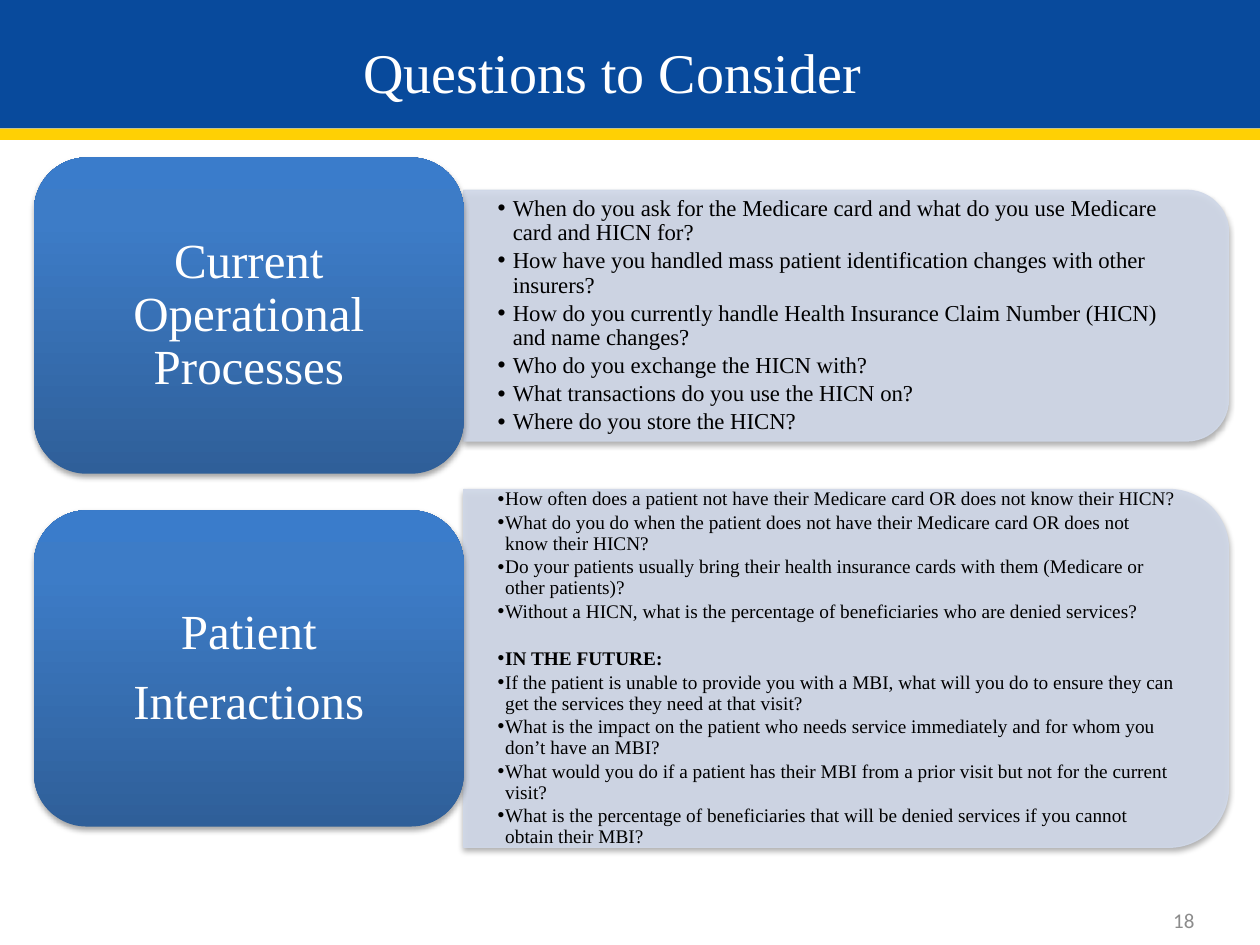
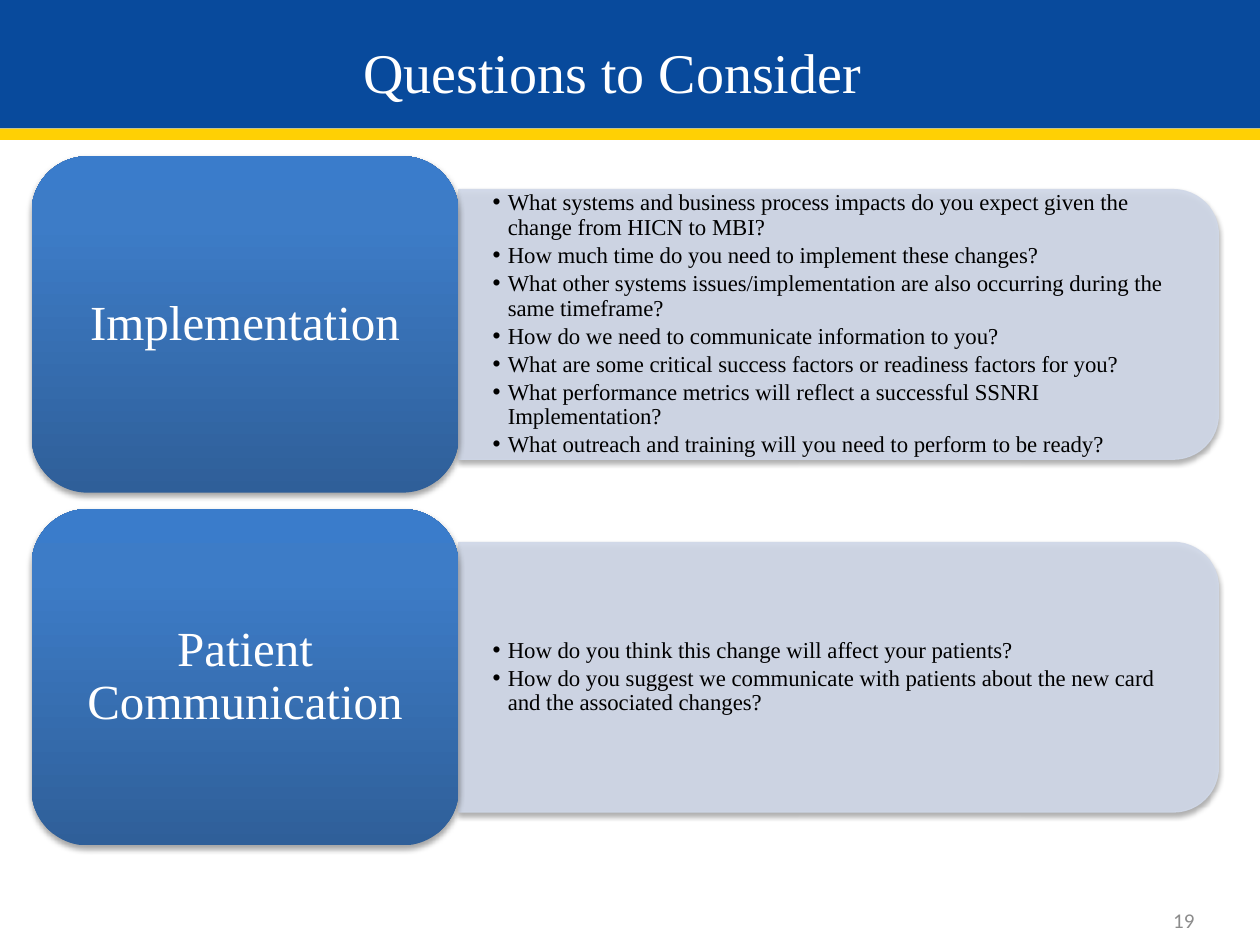
from copy import deepcopy

from lxml import etree
from pptx import Presentation
from pptx.dml.color import RGBColor
from pptx.enum.shapes import MSO_SHAPE, PP_PLACEHOLDER
from pptx.enum.text import MSO_ANCHOR, MSO_AUTO_SIZE, PP_ALIGN
from pptx.oxml.ns import qn
from pptx.util import Inches, Pt

RECT, ROUND = MSO_SHAPE.RECTANGLE, MSO_SHAPE.ROUNDED_RECTANGLE
ROUND_TOP = MSO_SHAPE.ROUND_2_SAME_RECTANGLE
SLIDE_NUMBER = PP_PLACEHOLDER.SLIDE_NUMBER
MIDDLE, NO_FIT = MSO_ANCHOR.MIDDLE, MSO_AUTO_SIZE.NONE
CENTER, LEFT, RIGHT = PP_ALIGN.CENTER, PP_ALIGN.LEFT, PP_ALIGN.RIGHT

COLORS = {
    "band": "084A9C", "stripe": "FFD004", "panel": "D0D8E8",
    "block_low": "2F5F99", "block_mid": "3D7CC7", "block_high": "3A7CCB",
    "white": "FFFFFF", "black": "000000", "number": "8C8C8C",
}
SERIF, SANS = "Times New Roman", "Calibri"
CORNER_INSET = 0.05
ROW_PITCH = 2.8
FIRST_NUMBER = 18

SLIDES = [
    {
        "block": (0.27, 1.25, 3.41, 2.51), "panel_width": 6.07,
        "rows": [
            {
                "label": ["Current Operational Processes"],
                "panel_height": 1.99, "size": 13, "indent": 0.12,
                "questions": [
                    "When do you ask for the Medicare card and what do you use Medicare card and HICN for?",
                    "How have you handled mass patient identification changes with other insurers?",
                    "How do you currently handle Health Insurance Claim Number (HICN) and name changes?",
                    "Who do you exchange the HICN with?",
                    "What transactions do you use the HICN on?",
                    "Where do you store the HICN?",
                ],
            },
            {
                "label": ["Patient", "Interactions"],
                "panel_height": 2.84, "size": 11, "indent": 0.06,
                "questions": [
                    "How often does a patient not have their Medicare card OR does not know their HICN?",
                    "What do you do when the patient does not have their Medicare card OR does not know their HICN?",
                    "Do your patients usually bring their health insurance cards with them (Medicare or other patients)?",
                    "Without a HICN, what is the percentage of beneficiaries who are denied services?",
                    "IN THE FUTURE:",
                    "If the patient is unable to provide you with a MBI, what will you do to ensure they can get the services they need at that visit?",
                    "What is the impact on the patient who needs service immediately and for whom you don’t have an MBI?",
                    "What would you do if a patient has their MBI from a prior visit but not for the current visit?",
                    "What is the percentage of beneficiaries that will be denied services if you cannot obtain their MBI?",
                ],
            },
        ],
    },
    {
        "block": (0.25, 1.24, 3.39, 2.67), "panel_width": 6.03,
        "rows": [
            {
                "label": ["Implementation"],
                "panel_height": 2.14, "size": 13, "indent": 0.12,
                "questions": [
                    "What systems and business process impacts do you expect given the change from HICN to MBI?",
                    "How much time do you need to implement these changes?",
                    "What other systems issues/implementation are also occurring during the same timeframe?",
                    "How do we need to communicate information to you?",
                    "What are some critical success factors or readiness factors for you?",
                    "What performance metrics will reflect a successful SSNRI Implementation?",
                    "What outreach and training will you need to perform to be ready?",
                ],
            },
            {
                "label": ["Patient Communication"],
                "panel_height": 2.14, "size": 13, "indent": 0.12,
                "questions": [
                    "How do you think this change will affect your patients?",
                    "How do you suggest we communicate with patients about the new card and the associated changes?",
                ],
            },
        ],
    },
]


def rgb(name):
    """Return the named colour."""
    return RGBColor.from_string(COLORS[name])


def place(sp, left, top, width, height):
    """Move and size a shape, in inches."""
    sp.left, sp.top = Inches(left), Inches(top)
    sp.width, sp.height = Inches(width), Inches(height)


def add_plain_shape(slide, kind, box):
    """Add a preset shape without line or shadow."""
    sp = slide.shapes.add_shape(kind, *map(Inches, box))
    sp.shadow.inherit = False
    sp.line.fill.background()
    return sp


def add_shadow(sp):
    """Give a shape a soft shadow below it."""
    effects = sp.element.spPr.find(qn("a:effectLst"))
    shadow = etree.SubElement(effects, qn("a:outerShdw"), blurRad="40000",
                              dist="23000", dir="5400000", rotWithShape="0")
    color = etree.SubElement(shadow, qn("a:srgbClr"), val=COLORS["black"])
    etree.SubElement(color, qn("a:alpha"), val="35000")


def set_frame(tf, inset_x, inset_y):
    """Wrap, centre vertically and inset a text frame."""
    tf.word_wrap, tf.auto_size, tf.vertical_anchor = True, NO_FIT, MIDDLE
    tf.margin_left = tf.margin_right = Inches(inset_x)
    tf.margin_top = tf.margin_bottom = Inches(inset_y)


def add_run(p, text, size, color, font=SERIF, bold=False):
    """Add one formatted run."""
    r = p.add_run()
    r.text = text
    r.font.name, r.font.size, r.font.bold = font, Pt(size), bold
    r.font.color.rgb = rgb(color)
    return r


def write_paragraphs(tf, lines, size, color, align, after):
    """Write lines with tight leading and a gap after each, then yield them."""
    for i, line in enumerate(lines):
        p = tf.paragraphs[0] if i == 0 else tf.add_paragraph()
        p.alignment, p.line_spacing = align, 0.9
        p.space_before, p.space_after = Pt(0), Pt(size * after)
        add_run(p, line, size, color, bold=line.isupper())
        yield p


def set_up_layout(slide):
    """Put the header bands and the title position on the shared layout."""
    layout = slide.slide_layout
    bands = [("band", (0, 0, 10, 1.02)), ("stripe", (0, 1.02, 10, 0.09))]
    for i, (color, box) in enumerate(bands):
        sp = add_plain_shape(slide, RECT, box)
        sp.fill.solid()
        sp.fill.fore_color.rgb = rgb(color)
        sp.element.find(".//" + qn("p:cNvPr")).set("id", str(20 + i))
        layout.shapes.element.insert(2 + i, sp.element)
    place(layout.placeholders[0], 0.92, 0.14, 7.88, 0.92)


def add_title(slide):
    """Fill the title placeholder."""
    tf = slide.shapes.title.text_frame
    set_frame(tf, 0.1, 0.05)
    list(write_paragraphs(tf, ["Questions to Consider"], 32, "white", CENTER, 0))


def add_number(slide, number):
    """Add the slide number placeholder with its field."""
    source = next(ph for ph in slide.slide_layout.placeholders
                  if ph.placeholder_format.type == SLIDE_NUMBER)
    slide.shapes.element.append(deepcopy(source.element))
    sp = slide.shapes[-1]
    place(sp, 7.25, 7.1, 2.33, 0.4)
    tf = sp.text_frame
    tf.clear()
    set_frame(tf, 0.1, 0.05)
    p = tf.paragraphs[0]
    p.alignment = RIGHT
    r = add_run(p, str(number), 12, "number", SANS)._r
    field = etree.SubElement(p._p, qn("a:fld"), type="slidenum",
                             id="{B6F15528-21DE-4FAA-801E-634DDDAF4B2B}")
    field.extend(list(r))
    p._p.remove(r)


def add_block(slide, box, label):
    """Draw the gradient block with its label."""
    sp = add_plain_shape(slide, ROUND, box)
    sp.fill.gradient()
    sp.fill.gradient_angle = 90
    stops = sp.element.spPr.find(".//" + qn("a:gsLst"))
    stops.append(deepcopy(stops[0]))
    ramp = [(0, "block_low"), (0.8, "block_mid"), (1, "block_high")]
    for stop, (position, color) in zip(sp.fill.gradient_stops, ramp):
        stop.position, stop.color.rgb = position, rgb(color)
    add_shadow(sp)
    set_frame(sp.text_frame, 0.12, 0.06)
    list(write_paragraphs(sp.text_frame, label, 28, "white", CENTER, 0.35))


def add_panel(slide, box, body):
    """Draw the panel, rounded on its right, behind the body placeholder."""
    left, top, width, height = box
    shift = (width - height) / 2
    sp = add_plain_shape(slide, ROUND_TOP, (left + shift, top - shift, height, width))
    sp.rotation = 90
    sp.fill.solid()
    sp.fill.fore_color.rgb = rgb("panel")
    sp.line.color.rgb = rgb("panel")
    sp.line.width = Pt(0.75)
    for color in list(sp.element.spPr.iter(qn("a:srgbClr"))):
        etree.SubElement(color, qn("a:alpha"), val="90000")
    add_shadow(sp)
    body.element.addprevious(sp.element)


def fill_questions(body, box, row):
    """Fill the body placeholder with bulleted questions."""
    left, top, width, height = box
    inset = CORNER_INSET * height
    place(body, left, top + inset, width - inset, height - 2 * inset)
    tf = body.text_frame
    set_frame(tf, 0.27, 0.14)
    indent = Inches(row["indent"])
    for p in write_paragraphs(tf, row["questions"], row["size"], "black", LEFT, 0.15):
        p.level = 1
        if p.text.isupper():
            p.space_before = Pt(13.5)
        pPr = p._p.get_or_add_pPr()
        pPr.set("marL", str(indent))
        pPr.set("indent", str(-indent))
        etree.SubElement(pPr, qn("a:buChar"), char="•")


def add_row(slide, box, panel_width, row, body):
    """Build one topic: block on the left, panel centred beside it."""
    left, top, width, height = box
    panel_height = row["panel_height"]
    panel = (left + width, top + (height - panel_height) / 2, panel_width, panel_height)
    add_panel(slide, panel, body)
    fill_questions(body, panel, row)
    add_block(slide, box, row["label"])


def build_slide(slide, content, number):
    """Build one slide of stacked topics."""
    add_title(slide)
    add_number(slide, number)
    left, top, width, height = content["block"]
    for i, row in enumerate(content["rows"]):
        box = (left, top + i * ROW_PITCH, width, height)
        add_row(slide, box, content["panel_width"], row, slide.placeholders[i + 1])


def main():
    """Build and save the presentation."""
    prs = Presentation()
    prs.slide_width, prs.slide_height = Inches(10), Inches(7.5)
    prs.element.set("firstSlideNum", str(FIRST_NUMBER))
    for i, content in enumerate(SLIDES):
        slide = prs.slides.add_slide(prs.slide_layouts[3])
        if i == 0:
            set_up_layout(slide)
        build_slide(slide, content, FIRST_NUMBER + i)
    prs.save("out.pptx")


if __name__ == "__main__":
    main()
